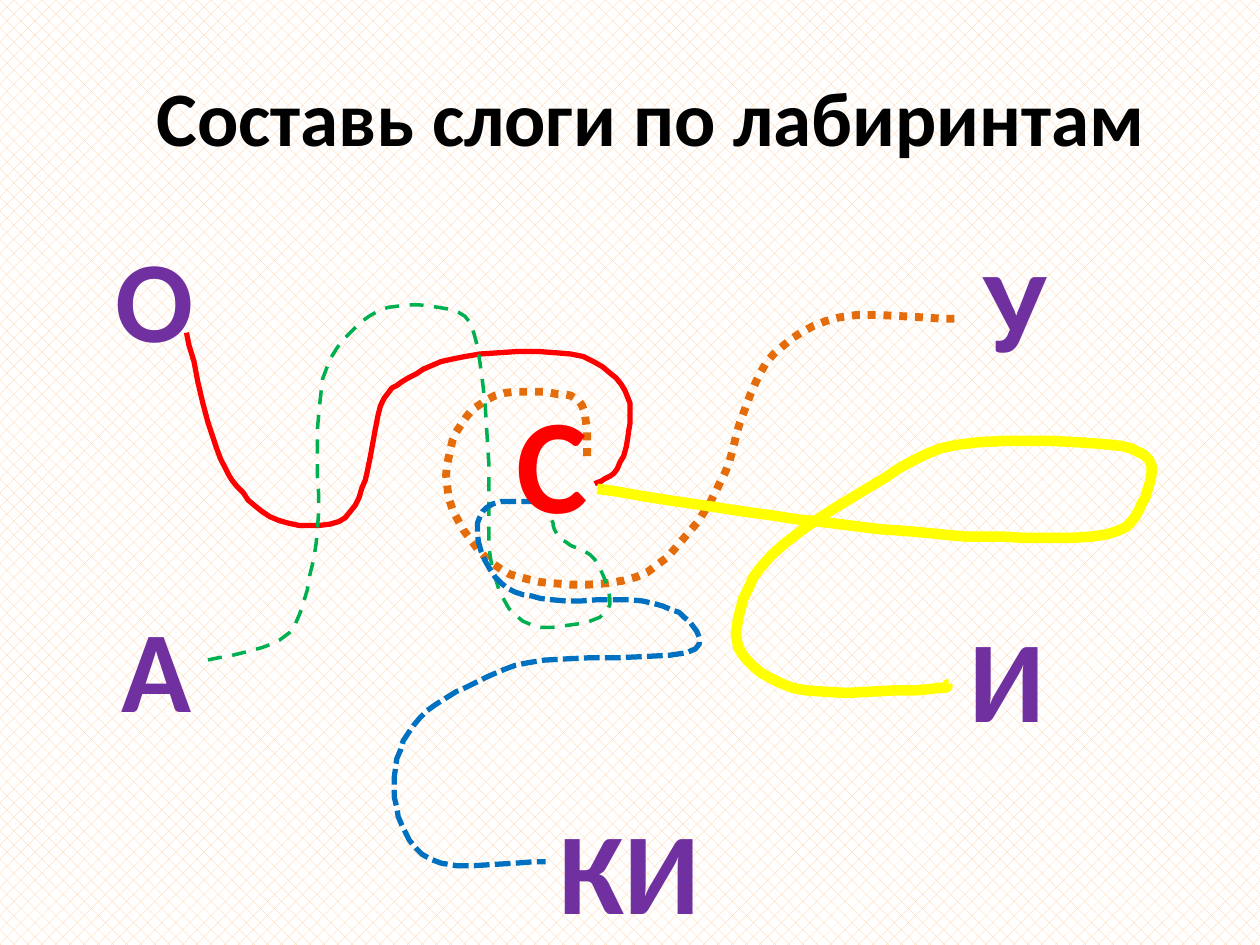
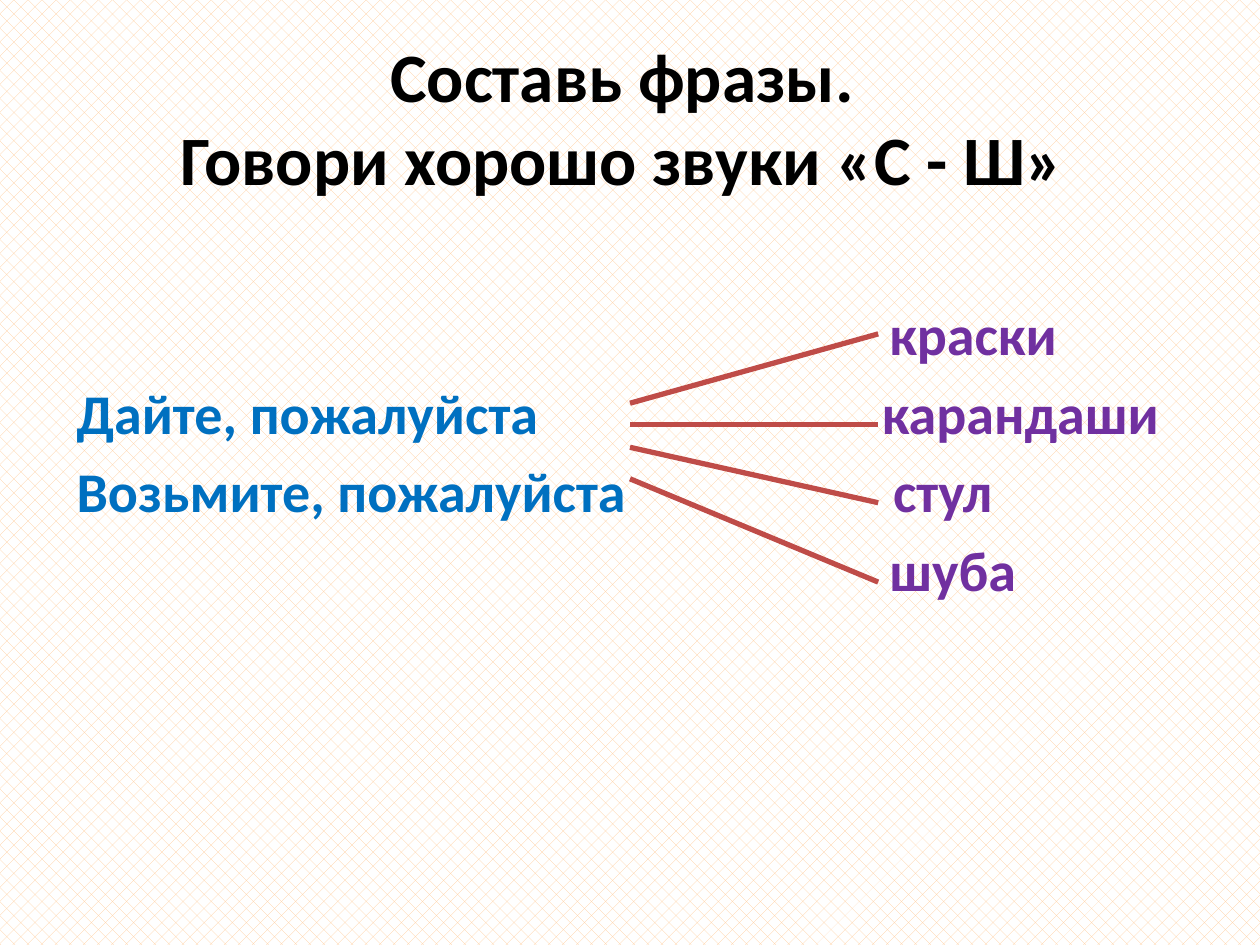
import pptx
import pptx.util
import pptx.dml.color
import pptx.enum.dml
import pptx.enum.text
import pptx.enum.shapes
import lxml.etree
from pptx.oxml.ns import qn

PX = 9144
STEPS = 6
FONT = "Calibri"
RGB = pptx.dml.color.RGBColor
BLACK = RGB.from_string("000000")
WHITE = RGB.from_string("FFFFFF")
PEACH = RGB.from_string("FFCC99")
ORANGE = RGB.from_string("E46C0A")
RED = RGB.from_string("FF0000")
GREEN = RGB.from_string("00B050")
YELLOW = RGB.from_string("FFFF00")
BLUE = RGB.from_string("0070C0")
PURPLE = RGB.from_string("7030A0")
BRICK = RGB.from_string("BF4C48")
DASH = pptx.enum.dml.MSO_LINE
ANCHOR = pptx.enum.text.MSO_ANCHOR


def add_text(page, text, box, size, color, anchor=ANCHOR.TOP):
    frame = page.shapes.add_textbox(*[n * PX for n in box]).text_frame
    frame.word_wrap = True
    frame.vertical_anchor = anchor
    para = frame.paragraphs[0]
    para.text = text
    para.alignment = pptx.enum.text.PP_ALIGN.CENTER
    para.font.name = FONT
    para.font.size = pptx.util.Pt(size)
    para.font.bold = True
    para.font.color.rgb = color


def smooth(knots):
    ends = [knots[0], *knots, knots[-1]]
    curve = [knots[0]]
    for a, b, c, d in zip(ends, ends[1:], ends[2:], ends[3:]):
        for step in range(1, STEPS + 1):
            t = step / STEPS
            curve.append(tuple(
                round(q + t * (r - p + t * (2 * p - 5 * q + 4 * r - s + t * (3 * q - p - 3 * r + s))) / 2)
                if step < STEPS else r
                for p, q, r, s in zip(a, b, c, d)))
    return curve


deck = pptx.Presentation()
deck.slide_width = 1000 * PX
deck.slide_height = 750 * PX
maze, talk = [deck.slides.add_slide(deck.slide_layouts[6]) for _ in range(2)]
for page in (maze, talk):
    fill = page.background.fill
    fill.patterned()
    fill.pattern = pptx.enum.dml.MSO_PATTERN.PERCENT_25
    fill.fore_color.rgb = PEACH
    fill.back_color.rgb = WHITE

add_text(maze, "Составь слоги по лабиринтам", (67, 29, 900, 125), 44, BLACK, ANCHOR.MIDDLE)

trails = [
    (ORANGE, 4.5, DASH.ROUND_DOT, [
        (466, 362), (462, 322), (438, 312), (393, 314), (362, 343), (356, 395), (386, 443),
        (429, 462), (505, 458), (548, 421), (576, 374), (590, 328), (614, 281), (666, 252), (759, 253)]),
    (RED, 3, DASH.SOLID, [
        (472, 384), (490, 372), (500, 336), (493, 305), (453, 281), (369, 283), (324, 300),
        (302, 322), (290, 381), (269, 414), (221, 413), (188, 386), (169, 347), (148, 264)]),
    (GREEN, 2, DASH.DASH, [
        (438, 413), (445, 428), (472, 444), (484, 480), (460, 495), (415, 493), (390, 447),
        (387, 352), (376, 264), (348, 244), (300, 247), (262, 285), (252, 340), (252, 419),
        (238, 487), (216, 511), (157, 525)]),
    (YELLOW, 6, DASH.SOLID, [
        (474, 388), (612, 409), (712, 421), (780, 426), (879, 424), (906, 400), (912, 365),
        (869, 352), (760, 353), (691, 386), (612, 441), (586, 490), (593, 524), (640, 548),
        (738, 547), (753, 543)]),
    (BLUE, 3, DASH.SQUARE_DOT, [
        (443, 399), (391, 400), (379, 425), (398, 463), (438, 476), (510, 477), (547, 493),
        (545, 518), (431, 524), (379, 541), (333, 570), (314, 609), (319, 655), (350, 685),
        (433, 684)]),
]
for color, width, dash, knots in trails:
    pen = maze.shapes.build_freeform(*knots[0], scale=PX)
    pen.add_line_segments(smooth(knots)[1:], close=False)
    trail = pen.convert_to_shape()
    trail.shadow.inherit = False
    trail.fill.background()
    trail.line.color.rgb = color
    trail.line.width = pptx.util.Pt(width)
    trail.line.dash_style = dash

add_text(maze, "С", (352, 296, 172, 140), 77, RED)
ends = [("А", 38, 469), ("И", 713, 477), ("КИ", 414, 629), ("У", 720, 183), ("О", 37, 175)]
for text, left, top in ends:
    add_text(maze, text, (left, top, 172, 121), 66, PURPLE)

add_text(talk, "Составь фразы. \vГовори хорошо звуки «С - Ш» ", (50, 30, 900, 125), 39.6, BLACK, ANCHOR.MIDDLE)

frame = talk.shapes.add_textbox(51 * PX, 233 * PX, 900 * PX, 397 * PX).text_frame
frame.word_wrap = True
rows = [
    ("", "краски", 645),
    ("Дайте, пожалуйста", "карандаши", 639),
    ("Возьмите, пожалуйста", "стул", 648),
    ("", "шуба", 645),
]
for i, (ask, thing, stop) in enumerate(rows):
    para = frame.add_paragraph() if i else frame.paragraphs[0]
    para.font.name = FONT
    para.font.size = pptx.util.Pt(32)
    para.font.bold = True
    para.space_before = pptx.util.Pt(6.4 if i else 0)
    props = para._p.get_or_add_pPr()
    tabs = lxml.etree.Element(qn("a:tabLst"))
    lxml.etree.SubElement(tabs, qn("a:tab"), pos=str(stop * PX), algn="l")
    props.find(qn("a:defRPr")).addprevious(tabs)
    for text, color in ((ask + "\t", BLUE), (thing, PURPLE)):
        run = para.add_run()
        run.text = text
        run.font.color.rgb = color

for start, end in ((320, 265), (337, 337), (355, 399), (380, 462)):
    link = talk.shapes.add_connector(
        pptx.enum.shapes.MSO_CONNECTOR.STRAIGHT, 500 * PX, start * PX, 697 * PX, end * PX)
    link.line.color.rgb = BRICK
    link.line.width = pptx.util.Pt(3)
    lxml.etree.SubElement(link._element.spPr, qn("a:effectLst"))

deck.save("out.pptx")
